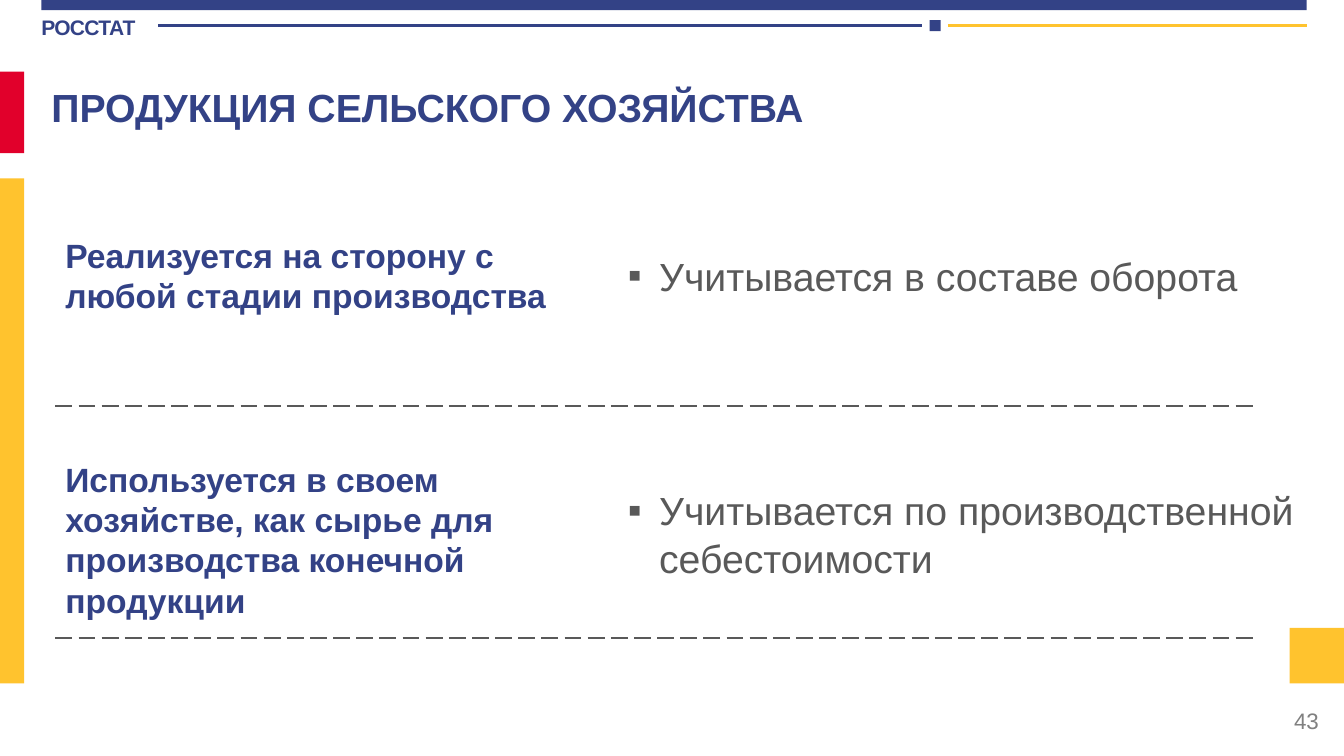
from dataclasses import dataclass

from lxml import etree
from pptx import Presentation
from pptx import util as u
from pptx.dml import color
from pptx.enum import dml, shapes, text
from pptx.oxml import ns


@dataclass(frozen=True)
class Theme:
    font: str = "Arial"
    blue: str = "334286"
    red: str = "E1002B"
    yellow: str = "FFC32E"
    white: str = "FFFFFF"
    dark_gray: str = "595959"
    light_gray: str = "808080"
    brand_size: int = 15
    number_size: int = 16
    label_size: int = 24
    title_size: int = 28


THEME = Theme()


def rgb(value):
    return color.RGBColor.from_string(value)


def place(shape, box):
    shape.left, shape.top, shape.width, shape.height = map(u.Inches, box)


def write_text(shape, content, size, fill=THEME.blue, bold=False, align=text.PP_ALIGN.LEFT,
               anchor=text.MSO_ANCHOR.TOP, bullet=None, spacing=None, margins=None):
    frame = shape.text_frame
    frame.word_wrap = True
    frame.auto_size = text.MSO_AUTO_SIZE.NONE
    frame.vertical_anchor = anchor
    if margins:
        (frame.margin_left, frame.margin_top,
         frame.margin_right, frame.margin_bottom) = map(u.Inches, margins)
    paragraph = frame.paragraphs[0]
    paragraph.alignment = align
    if bullet:
        properties = paragraph._p.get_or_add_pPr()
        indent = u.Inches(0.31)
        properties.set("marL", str(indent))
        properties.set("indent", str(-indent))
        etree.SubElement(properties, ns.qn("a:buFont"), typeface=THEME.font)
        etree.SubElement(properties, ns.qn("a:buChar"), char=bullet)
    run = paragraph.add_run()
    run.text = content
    run.font.name = THEME.font
    run.font.size = u.Pt(size)
    run.font.bold = bold
    run.font.color.rgb = rgb(fill)
    if spacing:
        run._r.get_or_add_rPr().set("spc", str(int(spacing * 100)))


def add_text(slide, box, content, size, **style):
    shape = slide.shapes.add_textbox(*map(u.Inches, box))
    write_text(shape, content, size, **style)


def add_block(slide, box, fill):
    shape = slide.shapes.add_shape(shapes.MSO_SHAPE.RECTANGLE, *map(u.Inches, box))
    shape.shadow.inherit = False
    shape.fill.solid()
    shape.fill.fore_color.rgb = rgb(fill)
    shape.line.fill.background()


def add_rule(slide, left, right, top, fill, width, dash=None):
    line = slide.shapes.add_connector(
        shapes.MSO_CONNECTOR.STRAIGHT, *map(u.Inches, (left, top, right, top)))
    line.line.color.rgb = rgb(fill)
    line.line.width = u.Pt(width)
    if dash:
        line.line.dash_style = dash
    etree.SubElement(line._element.spPr, ns.qn("a:effectLst"))


def add_header(slide, box):
    left, top, width, height = box
    right = left + width
    add_block(slide, (left, top, width, 0.1), THEME.blue)
    add_text(slide, (left, top + 0.13, 1.15, 0.32), "РОССТАТ", THEME.brand_size,
             bold=True, spacing=-0.5, margins=(0, 0.01, 0, 0))
    rule_top = top + height / 2
    marker = left + 8.81
    add_rule(slide, left + 1.16, marker - 0.08, rule_top, THEME.blue, 2)
    add_rule(slide, marker + 0.18, right, rule_top, THEME.yellow, 2)
    add_block(slide, (marker, top + 0.2, 0.11, 0.11), THEME.blue)


def add_side_bars(slide, box):
    left, top, width, height = box
    red_height, gap = 0.81, 0.25
    yellow_top = top + red_height + gap
    add_block(slide, (left, top, width, red_height), THEME.red)
    add_block(slide, (left, yellow_top, width, top + height - yellow_top), THEME.yellow)


def add_title(slide, box, content):
    title = slide.shapes.title
    place(title, box)
    write_text(title, content, THEME.title_size, bold=True)


def add_row(slide, box, label, label_box, note, note_box):
    left, top, width, height = box
    label_top, label_width, label_height = label_box
    note_top, note_width, note_height = note_box
    add_text(slide, (left, top + label_top, label_width, label_height), label,
             THEME.label_size, bold=True)
    add_text(slide, (left + 5.58, top + note_top, note_width, note_height), note,
             THEME.title_size, fill=THEME.dark_gray, bullet="▪")
    add_rule(slide, left, left + width, top + height, THEME.dark_gray, 1.5,
             dml.MSO_LINE.LONG_DASH)


def add_footer(slide, box, number):
    left, top, width, height = box
    right = left + width
    add_block(slide, (right - 0.54, top, 0.54, 0.55), THEME.yellow)
    add_text(slide, (right - 3.15, top + 0.72, 3, 0.4), number, THEME.number_size,
             fill=THEME.light_gray, align=text.PP_ALIGN.RIGHT,
             anchor=text.MSO_ANCHOR.MIDDLE)


def main():
    presentation = Presentation()
    presentation.slide_width = u.Inches(13.33)
    presentation.slide_height = u.Inches(7.5)
    slide = presentation.slides.add_slide(presentation.slide_layouts.get_by_name("Title Only"))
    add_header(slide, (0.41, 0, 12.55, 0.5))
    add_side_bars(slide, (0, 0.71, 0.24, 6.07))
    add_title(slide, (0.41, 0.78, 12.13, 0.62), "ПРОДУКЦИЯ СЕЛЬСКОГО ХОЗЯЙСТВА")
    add_row(slide, (0.55, 1.73, 11.91, 2.3),
            "Реализуется на сторону с любой стадии производства", (0.55, 5.52, 0.91),
            "Учитывается в составе оборота", (0.72, 6.67, 0.57))
    add_row(slide, (0.55, 4.03, 11.91, 2.3),
            "Используется в своем хозяйстве, как сырье для производства конечной продукции",
            (0.47, 4.76, 1.72),
            "Учитывается по производственной себестоимости", (0.75, 6.83, 1.04))
    add_footer(slide, (0, 6.23, 13.33, 1.27), "43")
    presentation.save("out.pptx")


if __name__ == "__main__":
    main()
